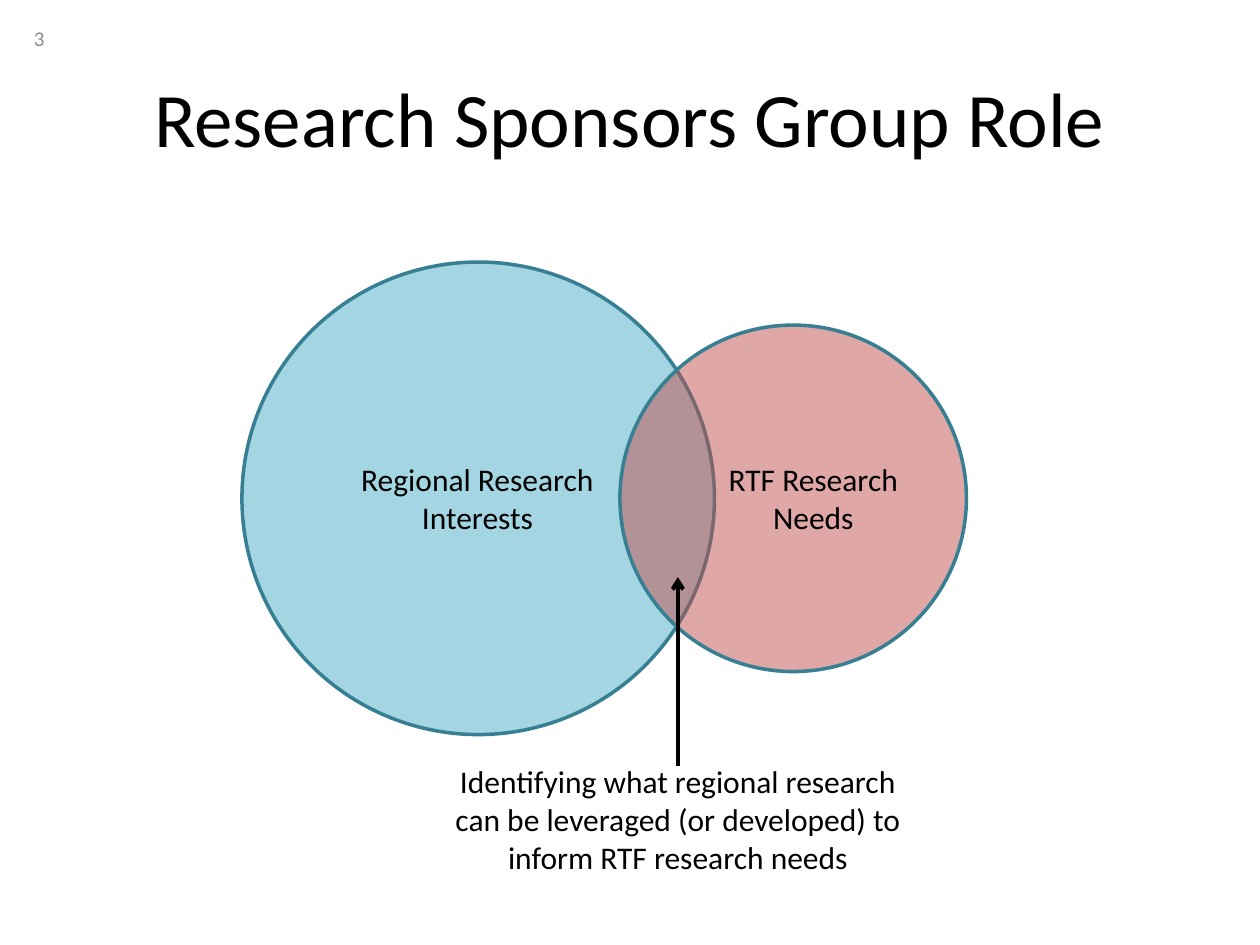
from lxml import etree
from pptx import Presentation
from pptx import util as u
from pptx.dml.color import RGBColor
from pptx.enum import shapes, text
from pptx.oxml import ns

BLACK = "000000"
OUTLINE = "377F92"


def color(value):
    """Turn a hex string into a colour."""
    return RGBColor.from_string(value)


def assign(target, values):
    """Set each named attribute of the target."""
    for name, value in values.items():
        setattr(target, name, value)


def add_circle(page, left, top, diameter, fill):
    """Draw a half-transparent outlined circle."""
    size = u.Inches(diameter)
    circle = page.shapes.add_shape(
        shapes.MSO_SHAPE.OVAL, u.Inches(left), u.Inches(top), size, size)
    circle.shadow.inherit = False
    circle.fill.solid()
    circle.fill.fore_color.rgb = color(fill)
    shade = circle._element.spPr.find(ns.qn("a:solidFill"))[0]
    etree.SubElement(shade, ns.qn("a:alpha"), val="50000")
    circle.line.color.rgb = color(OUTLINE)
    circle.line.width = u.Pt(2)


def add_text(page, words, left, top, width, height, size=18, fill=BLACK,
             align=text.PP_ALIGN.CENTER, anchor=text.MSO_ANCHOR.TOP):
    """Write one wrapped paragraph in a text box."""
    box = page.shapes.add_textbox(
        *(u.Inches(length) for length in (left, top, width, height)))
    assign(box.text_frame, {"word_wrap": True, "vertical_anchor": anchor})
    para = box.text_frame.paragraphs[0]
    para.alignment = align
    span = para.add_run()
    span.text = words
    assign(span.font, {"name": "Calibri", "size": u.Pt(size)})
    span.font.color.rgb = color(fill)


def add_arrow(page, x, bottom, top):
    """Draw a vertical arrow that points up."""
    arrow = page.shapes.add_connector(
        shapes.MSO_CONNECTOR.STRAIGHT,
        u.Inches(x), u.Inches(bottom), u.Inches(x), u.Inches(top))
    arrow.line.color.rgb = color(BLACK)
    arrow.line.width = u.Pt(2.25)
    properties = arrow._element.spPr
    etree.SubElement(properties.find(ns.qn("a:ln")), ns.qn("a:tailEnd"), type="arrow")
    etree.SubElement(properties, ns.qn("a:effectLst"))


def main():
    """Build the slide and save it."""
    deck = Presentation()
    assign(deck, {"slide_width": u.Inches(10), "slide_height": u.Inches(7.5)})
    page = deck.slides.add_slide(deck.slide_layouts[6])
    middle = text.MSO_ANCHOR.MIDDLE

    add_circle(page, 1.92, 2.08, 3.75, "4BACC6")
    add_circle(page, 4.92, 2.58, 2.75, "C0504D")
    add_text(page, "RTF Research Needs", 5.58, 3.6, 1.75, 0.71)
    add_text(page, "Research Sponsors Group Role", 0.5, 0.3, 9, 1.25,
             size=44, anchor=middle)
    add_text(page, "3", 0.17, 0.1, 2.33, 0.4, size=12, fill="8C8C8C",
             align=text.PP_ALIGN.LEFT, anchor=middle)
    add_text(page, "Regional Research Interests", 2.54, 3.6, 2.5, 0.71)
    add_text(page, "Identifying what regional research can be leveraged "
             "(or developed) to inform RTF research needs", 3.42, 6, 3.92, 1.01)
    add_arrow(page, 5.38, 6.08, 4.58)
    deck.save("out.pptx")


if __name__ == "__main__":
    main()
